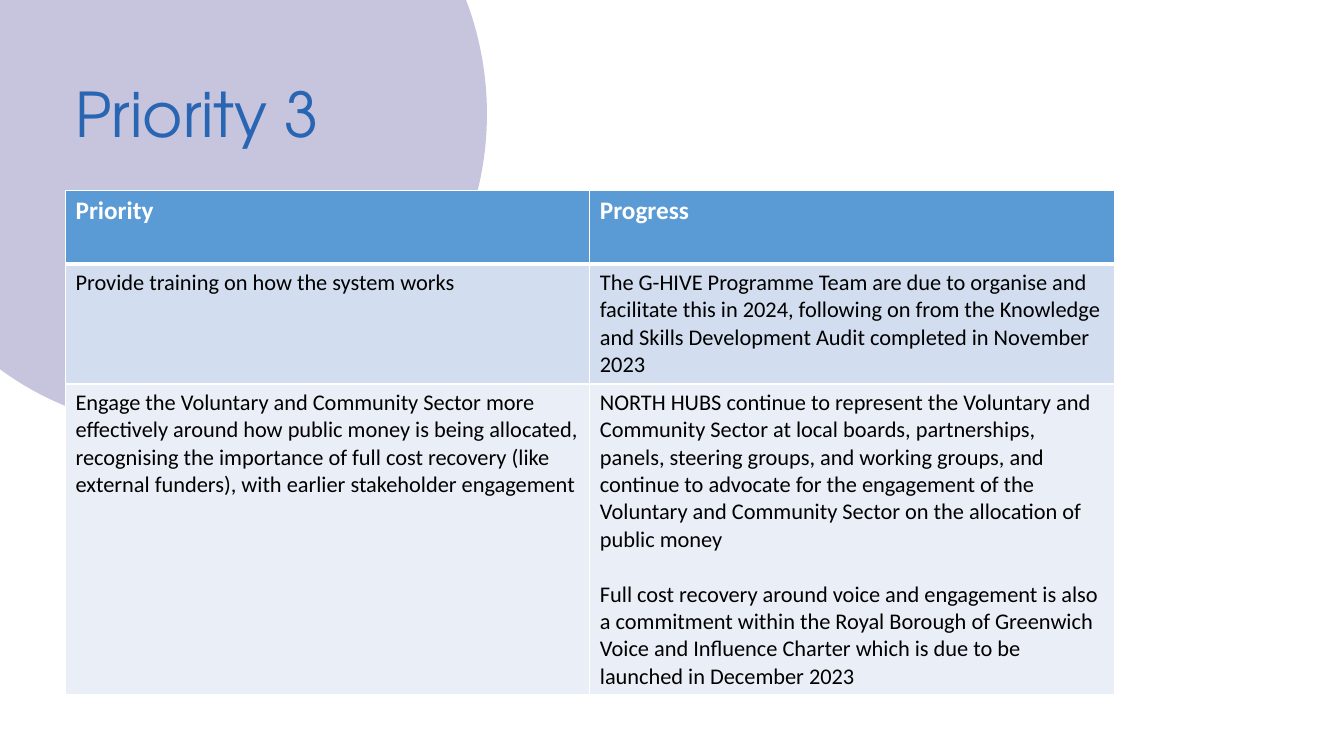
from lxml.etree import SubElement
from pptx import Presentation
from pptx.dml.color import RGBColor
from pptx.enum.shapes import MSO_SHAPE
from pptx.enum.text import MSO_ANCHOR
from pptx.oxml.ns import qn
from pptx.util import Pt

SCALE = 9144


def px(size):
    return size * SCALE


def tint(code):
    return RGBColor.from_string(code)


class Deck:
    head = "TeX Gyre Adventor"
    body = "Calibri"
    blue = "2865B2"
    white = "FFFFFF"
    black = "000000"
    bands = ("5B9BD5", "D2DEEF", "EAEFF7")

    def __init__(self):
        self.show = Presentation()
        self.show.slide_width = px(1333)
        self.show.slide_height = px(750)
        self.slide = self.show.slides.add_slide(self.show.slide_layouts[6])

    def disc(self, box, code, alpha):
        disc = self.slide.shapes.add_shape(MSO_SHAPE.OVAL, *map(px, box))
        disc.shadow.inherit = False
        disc.fill.solid()
        disc.fill.fore_color.rgb = tint(code)
        disc.line.fill.background()
        color = disc.fill._xPr.find(qn("a:solidFill"))[0]
        SubElement(color, qn("a:alpha"), val=str(alpha * 1000))

    def style(self, para, face, size, code, bold=False):
        font = para.font
        font.name = face
        font.size = Pt(size)
        font.bold = bold
        font.color.rgb = tint(code)

    def title(self, box, text):
        frame = self.slide.shapes.add_textbox(*map(px, box)).text_frame
        frame.word_wrap = True
        frame.vertical_anchor = MSO_ANCHOR.MIDDLE
        para = frame.paragraphs[0]
        para.text = text
        para.line_spacing = 0.9
        self.style(para, self.head, 44, self.blue)

    def edge(self, cell, side, width):
        line = SubElement(cell._tc.get_or_add_tcPr(), qn("a:ln" + side), w=str(Pt(width)))
        fill = SubElement(line, qn("a:solidFill"))
        SubElement(fill, qn("a:srgbClr"), val=self.white)

    def cell(self, cell, text, row):
        thick = {(0, "B"): 3, (1, "T"): 3}
        for side in "LRTB":
            self.edge(cell, side, thick.get((row, side), 1))
        cell.fill.solid()
        cell.fill.fore_color.rgb = tint(self.bands[row])
        cell.text = text
        for index, para in enumerate(cell.text_frame.paragraphs):
            if row == 0:
                self.style(para, self.body, 18, self.white, True)
            else:
                self.style(para, self.body, 16, self.black)
            if index:
                para.space_before = Pt(19.5)

    def table(self, box, highs, rows):
        shape = self.slide.shapes.add_table(len(rows), len(rows[0]), *map(px, box))
        table = shape.table
        table.first_row = False
        table.horz_banding = False
        for row, (high, texts) in enumerate(zip(highs, rows)):
            table.rows[row].height = px(high)
            for col, text in enumerate(texts):
                self.cell(table.cell(row, col), text, row)

    def save(self):
        self.show.save("out.pptx")


ROWS = [
    ("Priority", "Progress"),
    (
        "Provide training on how the system works",
        "The G-HIVE Programme Team are due to organise and facilitate this in 2024, "
        "following on from the Knowledge and Skills Development Audit completed in "
        "November 2023",
    ),
    (
        "Engage the Voluntary and Community Sector more effectively around how public "
        "money is being allocated, recognising the importance of full cost recovery "
        "(like external funders), with earlier stakeholder engagement",
        "NORTH HUBS continue to represent the Voluntary and Community Sector at local "
        "boards, partnerships, panels, steering groups, and working groups, and continue "
        "to advocate for the engagement of the Voluntary and Community Sector on the "
        "allocation of public money\n"
        "Full cost recovery around voice and engagement is also a commitment within the "
        "Royal Borough of Greenwich Voice and Influence Charter which is due to be "
        "launched in December 2023",
    ),
]


def main():
    deck = Deck()
    deck.disc((-127, -199, 610, 624), "483C95", 30)
    deck.title((65, 44, 1040, 145), "Priority 3")
    deck.table((65, 189, 1040, 500), (73, 119, 308), ROWS)
    deck.save()


if __name__ == "__main__":
    main()
